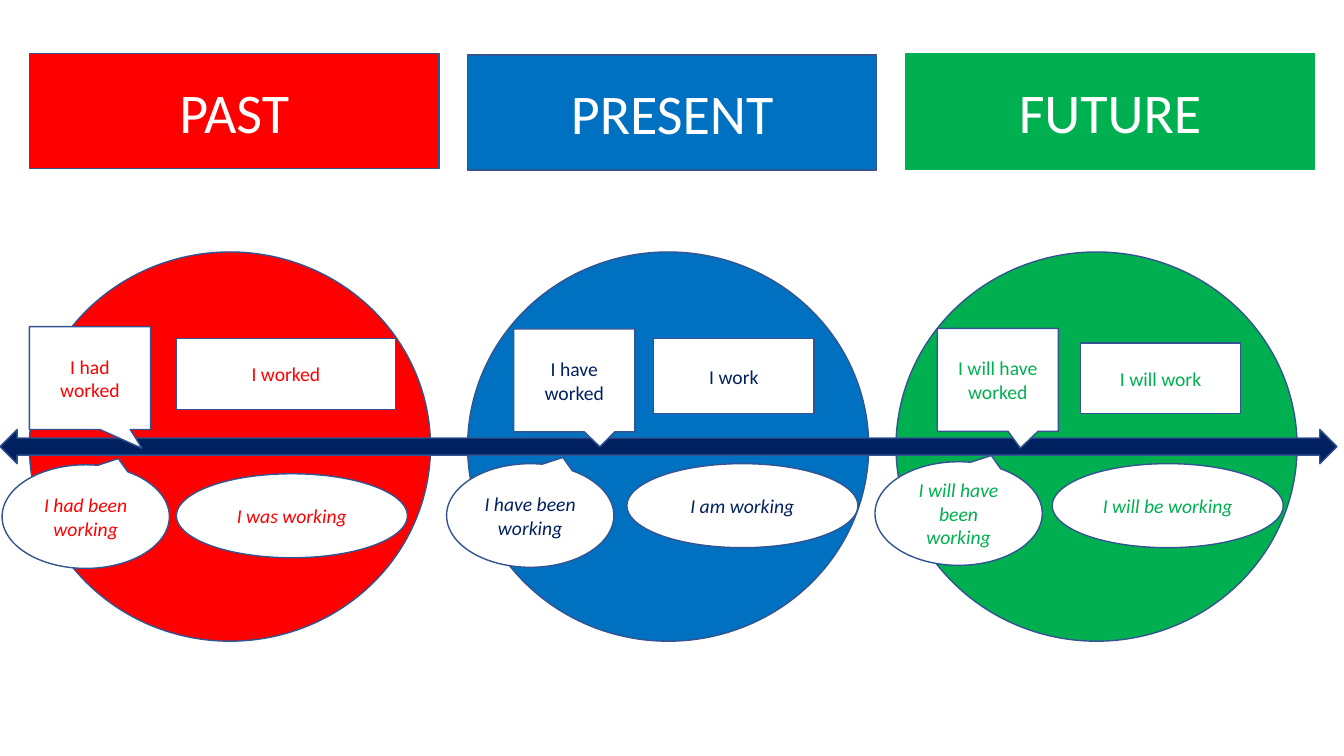
from dataclasses import dataclass

from pptx import Presentation
from pptx.dml.color import RGBColor
from pptx.enum.shapes import MSO_SHAPE as Shape
from pptx.enum.text import MSO_ANCHOR as Anchor, PP_ALIGN as Align
from pptx.util import Pt

RED = RGBColor(0xFF, 0x00, 0x00)
BLUE = RGBColor(0x00, 0x70, 0xC0)
GREEN = RGBColor(0x00, 0xB0, 0x50)
NAVY = RGBColor(0x00, 0x20, 0x60)
WHITE = RGBColor(0xFF, 0xFF, 0xFF)
OUTLINE = RGBColor(0x32, 0x54, 0x91)

CIRCLE_TOP, CIRCLE_W, CIRCLE_H = 180, 286.5, 278


@dataclass
class Form:
    text: str
    dx: float
    dy: float
    w: float
    h: float
    tip: tuple = ()


@dataclass
class Tense:
    name: str
    fill: RGBColor
    ink: RGBColor
    header_line: RGBColor
    header_top: float
    circle_left: float
    simple: Form
    continuous: Form
    perfect: Form
    perfect_continuous: Form


def perfect(text, dx, dy, tip):
    return Form(text, dx, dy, 86.5, 73.5, tip)


def perfect_continuous(text, dx, dy):
    return Form(text, dx, dy, 119.5, 74, (0.195, -0.56))


def continuous(text, dx, dy):
    return Form(text, dx, dy, 165, 60)


TENSES = [
    Tense("PAST", RED, RED, OUTLINE, 38.2, 21,
          Form("I worked", 105, 62, 156.5, 50.5),
          continuous("I was working", 105, 158.4),
          perfect("I had worked", 0, 53.3, (0.429, 0.682)),
          perfect_continuous("I had been working", -19.5, 152)),
    Tense("PRESENT", BLUE, NAVY, OUTLINE, 39.4, 334,
          Form("I work", 133, 62, 114.5, 53.5),
          continuous("I am working", 113.8, 151.2),
          perfect("I have worked", 33, 55, (0.211, 0.644)),
          perfect_continuous("I have been working", -15, 151.2)),
    Tense("FUTURE", GREEN, GREEN, GREEN, 38.6, 640,
          Form("I will work", 131.8, 65, 114.5, 50.5),
          continuous("I will be working", 111.6, 151.2),
          perfect("I will have worked", 29.5, 54.5, (0.187, 0.663)),
          perfect_continuous("I will have been working", -15, 149.8)),
]


def add_box(s, kind, box, fill, line=OUTLINE):
    sp = s.shapes.add_shape(kind, *(Pt(v) for v in box))
    sp.shadow.inherit = False
    sp.fill.solid()
    sp.fill.fore_color.rgb = fill
    sp.line.color.rgb = line
    sp.line.width = Pt(1)
    return sp


def write(sp, text, size, color, italic=False):
    tf = sp.text_frame
    tf.word_wrap = True
    tf.vertical_anchor = Anchor.MIDDLE
    p = tf.paragraphs[0]
    p.text = text
    p.alignment = Align.CENTER
    p.font.name = "Calibri"
    p.font.size = Pt(size)
    p.font.color.rgb = color
    p.font.italic = italic


def add_headers(s, left, width, gap):
    for i, tense in enumerate(TENSES):
        box = (left + i * (width + gap), tense.header_top, width, 82)
        sp = add_box(s, Shape.RECTANGLE, box, tense.fill, tense.header_line)
        write(sp, tense.name, 40, WHITE)


def add_timeline(s, left, top, width, height):
    for tense in TENSES:
        box = (tense.circle_left, CIRCLE_TOP, CIRCLE_W, CIRCLE_H)
        add_box(s, Shape.FLOWCHART_CONNECTOR, box, tense.fill)
    add_box(s, Shape.LEFT_RIGHT_ARROW, (left, top, width, height), NAVY)


def add_forms(s, tense, left, top):
    for kind, form, italic in (
        (Shape.RECTANGLE, tense.simple, False),
        (Shape.OVAL, tense.continuous, True),
        (Shape.RECTANGULAR_CALLOUT, tense.perfect, False),
        (Shape.OVAL_CALLOUT, tense.perfect_continuous, True),
    ):
        box = (left + form.dx, top + form.dy, form.w, form.h)
        sp = add_box(s, kind, box, WHITE)
        for i, value in enumerate(form.tip):
            sp.adjustments[i] = value
        write(sp, form.text, 14, tense.ink, italic)


def main():
    prs = Presentation()
    prs.slide_width, prs.slide_height = Pt(960), Pt(540)
    s = prs.slides.add_slide(prs.slide_layouts[6])
    add_timeline(s, 0, 306.8, 955, 24.5)
    add_headers(s, 21, 292.5, 20.3)
    for tense in TENSES:
        add_forms(s, tense, tense.circle_left, CIRCLE_TOP)
    prs.save("out.pptx")


if __name__ == "__main__":
    main()
